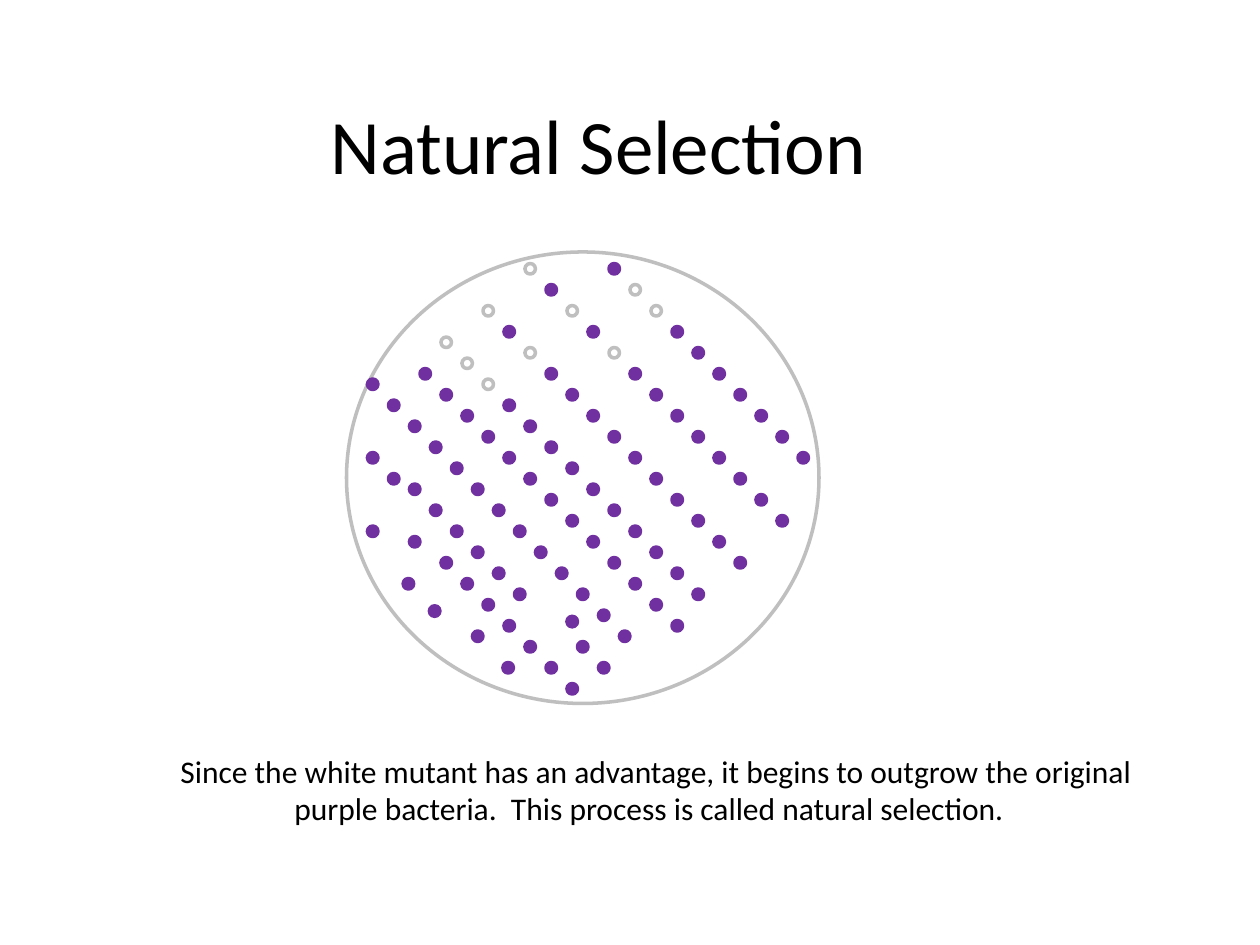
from pptx import Presentation, util as u
from pptx.dml.color import RGBColor
from pptx.enum import shapes, text

PX = u.Inches(1) // 120
COLORS = {"ink": "000000", "white": "FFFFFF", "gray": "BFBFBF", "purple": "7030A0"}
FONT = "Calibri"
DOT_SIZE = 10
DOT_STEP = 20

# Fill and line of each kind of bacterium
BACTERIA = {"p": ("purple", "purple"), "w": ("white", "gray")}

# Diagonal chains: left and top of the first dot, then one letter per dot
CHAINS = [
    (400, 351, "p" * 13),
    (420, 321, "www" + "p" * 10),
    (460, 291, "wpw" + "p" * 10),
    (500, 251, "wpwpw" + "p" * 8),
    (384, 551, "p"),
    (580, 251, "pww" + "p" * 7),
    (450, 601, "p"),
    (420, 531, "p" * 7),
    (450, 521, "ppp"),
    (350, 361, "p" * 13),
    (350, 501, "p"),
    (390, 461, "ppp"),
    (479, 631, "p"),
    (550, 611, "pp"),
    (350, 431, "pp"),
    (390, 511, "p"),
    (409, 577, "p"),
    (540, 587, "p"),
]


class SlideBuilder:
    def __init__(self, slide):
        self.slide = slide

    def color(self, name):
        return RGBColor.from_string(COLORS[name])

    def box(self, left, top, width, height):
        return [u.Emu(length * PX) for length in (left, top, width, height)]

    def ellipse(self, left, top, width, height, fill, line):
        shape = self.slide.shapes.add_shape(
            shapes.MSO_SHAPE.OVAL, *self.box(left, top, width, height))
        shape.shadow.inherit = False
        shape.fill.solid()
        shape.fill.fore_color.rgb = self.color(fill)
        shape.line.color.rgb = self.color(line)
        shape.line.width = u.Pt(2)

    def chain(self, left, top, kinds):
        """Draw dots down a diagonal, one per letter of kinds."""
        for index, kind in enumerate(kinds):
            offset = index * DOT_STEP
            self.ellipse(left + offset, top + offset, DOT_SIZE, DOT_SIZE, *BACTERIA[kind])

    def text(self, left, top, width, height, wording, size, anchor):
        shape = self.slide.shapes.add_textbox(*self.box(left, top, width, height))
        frame = shape.text_frame
        frame.word_wrap = True
        frame.vertical_anchor = anchor
        paragraph = frame.paragraphs[0]
        paragraph.alignment = text.PP_ALIGN.CENTER
        run = paragraph.add_run()
        run.text = wording
        run.font.name = FONT
        run.font.size = u.Pt(size)
        run.font.color.rgb = self.color("ink")


def main():
    presentation = Presentation()
    presentation.slide_width = u.Emu(1200 * PX)
    presentation.slide_height = u.Emu(900 * PX)
    builder = SlideBuilder(presentation.slides.add_slide(presentation.slide_layouts[6]))

    builder.text(60, 40, 1020, 193, "Natural Selection", 44, text.MSO_ANCHOR.MIDDLE)
    builder.ellipse(330, 240, 450, 430, "white", "gray")
    for chain in CHAINS:
        builder.chain(*chain)
    builder.text(
        145, 710, 960, 85,
        "Since the white mutant has an advantage, it begins to outgrow the original "
        "purple bacteria.  This process is called natural selection.  ",
        18, text.MSO_ANCHOR.TOP)

    presentation.save("out.pptx")


if __name__ == "__main__":
    main()
